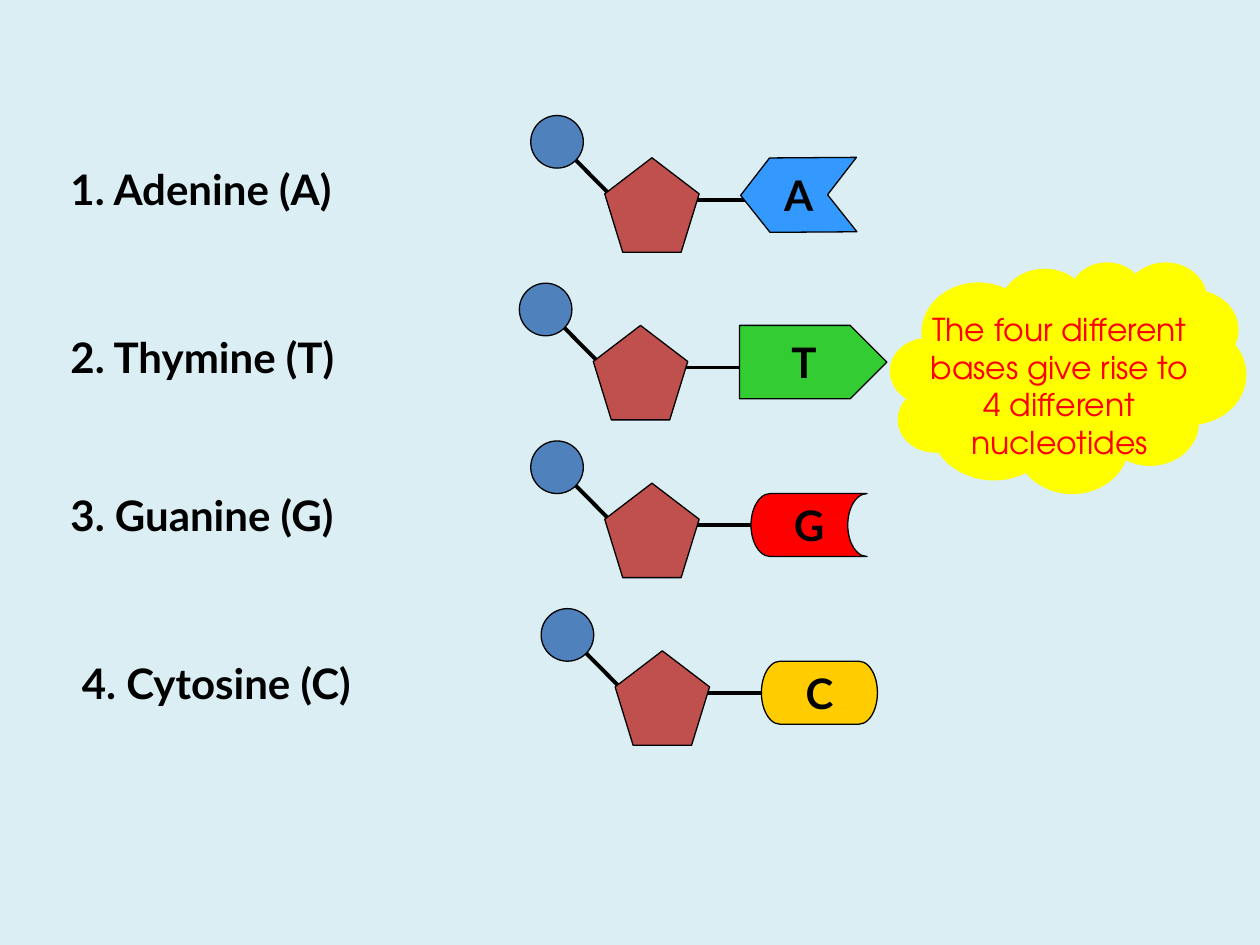
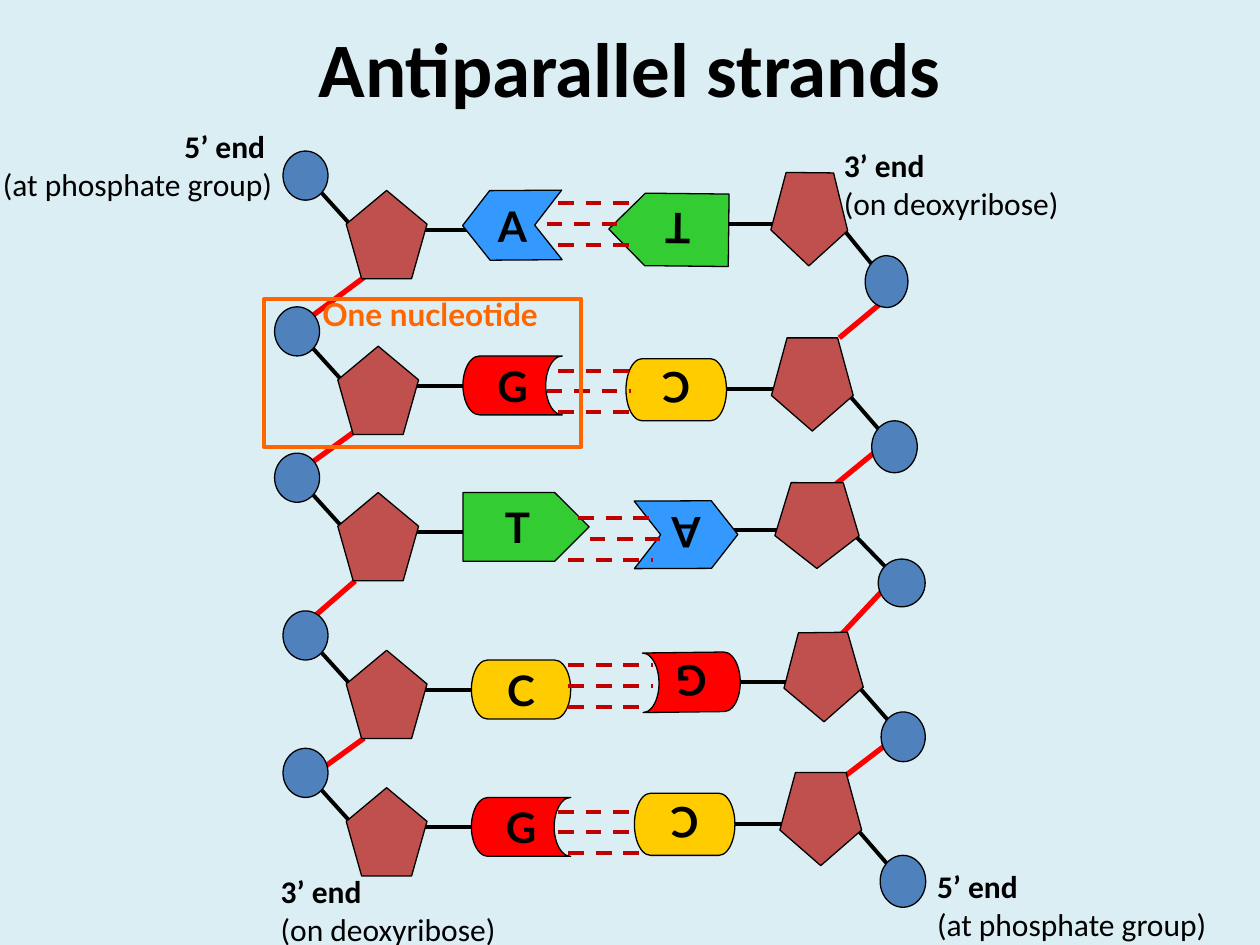
"""Build two slides on DNA bases and antiparallel strands."""
import dataclasses
import typing

import lxml.etree
import pptx
import pptx.dml.color
import pptx.enum.dml
import pptx.enum.shapes
import pptx.enum.text
import pptx.oxml.ns
import pptx.util

Cm = pptx.util.Cm
Pt = pptx.util.Pt
KIND = pptx.enum.shapes.MSO_SHAPE
ALIGN = pptx.enum.text.PP_ALIGN

BACK, BLACK, RED, BOND = "DBEEF4", "000000", "FF0000", "C00000"
SUGAR, BALL, CLOUD, FRAME = "C0504D", "4F81BD", "FFFF00", "FF6600"
LABEL = {"name": "Lato", "size": Pt(24), "bold": True}
TITLE = {"name": "Calibri", "size": Pt(44), "bold": True}
STRONG = {"name": "Calibri", "size": Pt(18), "bold": True}
PLAIN = {**STRONG, "bold": False}
NOTE = {"name": "TeX Gyre Adventor", "size": Pt(18)}
TAG = {**LABEL, "size": Pt(18)}
SIDE = 1.905
STEP = 0.42


@dataclasses.dataclass(frozen=True)
class Base:
    kind: typing.Any
    fill: str
    left: float
    top: float
    wide: float
    high: float
    turn: float = 0
    spin: int = 0
    adjust: typing.Optional[float] = None


@dataclasses.dataclass(frozen=True)
class Unit:
    base: str
    left: float
    top: float
    wide: float = SIDE
    high: float = SIDE
    flip: bool = False
    tilt: float = 0


@dataclasses.dataclass(frozen=True)
class Words:
    lines: tuple
    left: float
    top: float
    wide: float
    high: float
    fonts: tuple
    align: typing.Any = ALIGN.LEFT
    tint: str = BLACK


BASES = {
    "A": Base(KIND.CHEVRON, "3399FF", 2.74, 0, 2.34, 1.5, 179.6, 180, 0.392),
    "T": Base(KIND.PENTAGON, "33CC33", 2.95, 0, 2.97, 1.48),
    "G": Base(KIND.FLOWCHART_STORED_DATA, "FF0000", 2.95, 0.21, 2.34, 1.27),
    "C": Base(KIND.FLOWCHART_TERMINATOR, "FFCC00", 2.95, 0.21, 2.34, 1.27),
}
SINGLES = (
    Unit("A", 12.19, 3.18),
    Unit("C", 12.4, 13.12),
    Unit("G", 12.19, 9.74),
    Unit("T", 11.96, 6.56),
)
NAMES = (
    ("1. Adenine (A)", 1.17, 3.18),
    ("2. Thymine (T)", 1.17, 6.56),
    ("3. Guanine (G)", 1.17, 9.74),
    ("4. Cytosine (C)", 1.4, 13.12),
)
STRANDS = tuple(
    Unit(base, left, top, 1.63, 1.78)
    for base, left, top in (
        ("A", 6.98, 3.84),
        ("G", 6.81, 6.98),
        ("T", 6.81, 9.93),
        ("C", 6.98, 13.11),
        ("G", 6.98, 15.88),
    )
) + (
    Unit("T", 17.09, 5.36, 1.55, 1.88, True, 0.6),
    Unit("C", 17.2, 8.69, 1.65, 1.88, True),
    Unit("A", 17.32, 11.46, 1.7, 1.73, True, 0.2),
    Unit("G", 17.4, 14.55, 1.6, 1.8, True, -0.7),
    Unit("C", 17.37, 17.45, 1.65, 1.88, True),
)
LINKS = (
    (7.34, 5.59, 6.25, 6.4),
    (7.34, 8.56, 6.25, 9.35),
    (7.16, 11.71, 6.25, 12.5),
    (7.34, 14.88, 6.25, 15.67),
    (17.93, 5.97, 16.92, 6.81),
    (17.91, 8.89, 16.64, 9.93),
    (17.88, 11.81, 16.97, 12.78),
    (17.93, 14.96, 16.87, 15.77),
)
BONDS = (
    (4.09, ((11.25, 12.73), (11.02, 12.52), (11.25, 12.73))),
    (7.47, ((11.25, 12.73), (11.02, 12.73), (11.25, 12.73))),
    (10.44, ((11.66, 13.16), (11.89, 13.36), (11.46, 13.16))),
    (13.41, ((11.46, 13.16), (11.46, 13.16), (11.46, 12.93))),
    (16.36, ((11.25, 12.73), (11.25, 12.73), (11.46, 12.93))),
)
PAIR = (STRONG, PLAIN)
THREE = ("3’ end", "(on deoxyribose)")
ENDS = (
    Words(("5’ end ", "(at phosphate group)"), -0.38, 2.44, 6.12, 1.8, PAIR, ALIGN.RIGHT),
    Words(THREE, 16.76, 2.82, 7.11, 1.8, PAIR),
    Words(("5’ end", "(at phosphate group)"), 18.64, 17.35, 8.36, 1.8, PAIR),
    Words(THREE, 5.41, 17.45, 7.11, 1.8, PAIR),
)


def tone(code: str) -> pptx.dml.color.RGBColor:
    return pptx.dml.color.RGBColor.from_string(code)


def style(font, form: dict, tint: str = BLACK) -> None:
    for key, value in form.items():
        setattr(font, key, value)
    font.color.rgb = tone(tint)


def page(deck):
    slide = deck.slides.add_slide(deck.slide_layouts[6])
    slide.background.fill.solid()
    slide.background.fill.fore_color.rgb = tone(BACK)
    return slide


def write(slide, words: Words) -> None:
    area = (words.left, words.top, words.wide, words.high)
    frame = slide.shapes.add_textbox(*map(Cm, area)).text_frame
    frame.word_wrap = True
    frame.text = "\n".join(words.lines)
    for part, form in zip(frame.paragraphs, words.fonts):
        part.alignment = words.align
        style(part.font, form, words.tint)


def stroke(slide, ends: tuple, tint: str = BLACK, width: float = 2.25, dash=None) -> None:
    line = slide.shapes.add_connector(
        pptx.enum.shapes.MSO_CONNECTOR.STRAIGHT, *map(Cm, ends))
    line.line.color.rgb = tone(tint)
    line.line.width = Pt(width)
    if dash:
        line.line.dash_style = dash
    lxml.etree.SubElement(line._element.spPr, pptx.oxml.ns.qn("a:effectLst"))


def draw(slide, kind, area: tuple, fill: typing.Optional[str],
         edge: str = BLACK, width: float = 0.75, turn: float = 0):
    shape = slide.shapes.add_shape(kind, *map(Cm, area))
    shape.shadow.inherit = False
    if fill:
        shape.fill.solid()
        shape.fill.fore_color.rgb = tone(fill)
    else:
        shape.fill.background()
    shape.line.color.rgb = tone(edge)
    shape.line.width = Pt(width)
    shape.rotation = turn % 360
    return shape


def build(slide, unit: Unit) -> None:
    sign = -1 if unit.flip else 1
    wide, high = unit.wide / SIDE, unit.high / SIDE
    turn = unit.tilt + (180 if unit.flip else 0)

    def point(left: float, top: float) -> tuple:
        return unit.left + sign * left * wide, unit.top + sign * top * high

    def area(left: float, top: float, across: float, down: float) -> tuple:
        if unit.flip:
            left, top = left + across, top + down
        return (*point(left, top), across * wide, down * high)

    stroke(slide, point(1.68, 0.85) + point(2.95, 0.85))
    stroke(slide, point(0.21, 0.85) + point(-0.63, 0))
    draw(slide, KIND.REGULAR_PENTAGON, area(0, 0, SIDE, SIDE), SUGAR, turn=turn)
    draw(slide, KIND.OVAL, area(-1.49, -0.85, 1.06, 1.06), BALL, turn=turn)
    base = BASES[unit.base]
    shape = draw(slide, base.kind, area(base.left, base.top, base.wide, base.high),
                 base.fill, turn=turn + base.turn)
    if base.adjust:
        shape.adjustments[0] = base.adjust
    frame = shape.text_frame
    frame.text = unit.base
    frame.word_wrap = False
    frame.vertical_anchor = pptx.enum.text.MSO_ANCHOR.MIDDLE
    frame.paragraphs[0].alignment = ALIGN.CENTER
    style(frame.paragraphs[0].font, LABEL)
    if base.spin:
        frame._txBody.bodyPr.set("rot", str(base.spin * 60000))


def first(deck) -> None:
    slide = page(deck)
    for name, left, top in NAMES:
        write(slide, Words((name,), left, top, 7.19, 1.27, (LABEL,)))
    for unit in SINGLES:
        build(slide, unit)
    draw(slide, KIND.CLOUD, (17.98, 5.31, 7.11, 4.6), CLOUD, CLOUD, 2)
    note = "The four different bases give rise to 4 different nucleotides"
    write(slide, Words((note,), 18.31, 6.12, 6.1, 3.33, (NOTE,), ALIGN.CENTER, RED))


def second(deck) -> None:
    slide = page(deck)
    for link in LINKS:
        stroke(slide, link, RED, 3)
    for unit in STRANDS:
        build(slide, unit)
    for top, spans in BONDS:
        for row, (start, stop) in enumerate(spans):
            high = top + row * STEP
            stroke(slide, (start, high, stop, high), BOND,
                   dash=pptx.enum.dml.MSO_LINE.DASH)
    write(slide, Words(("Antiparallel strands",), 1.27, 0.28, 22.86, 3.18,
                       (TITLE,), ALIGN.CENTER))
    for words in ENDS:
        write(slide, words)
    draw(slide, KIND.RECTANGLE, (5.33, 6.02, 6.38, 3), None, FRAME, 2.25)
    write(slide, Words(("One nucleotide",), 6.25, 5.82, 5.99, 1.02, (TAG,), tint=FRAME))


def main() -> None:
    deck = pptx.Presentation()
    deck.slide_width, deck.slide_height = Cm(25.4), Cm(19.05)
    first(deck)
    second(deck)
    deck.save("out.pptx")


if __name__ == "__main__":
    main()
